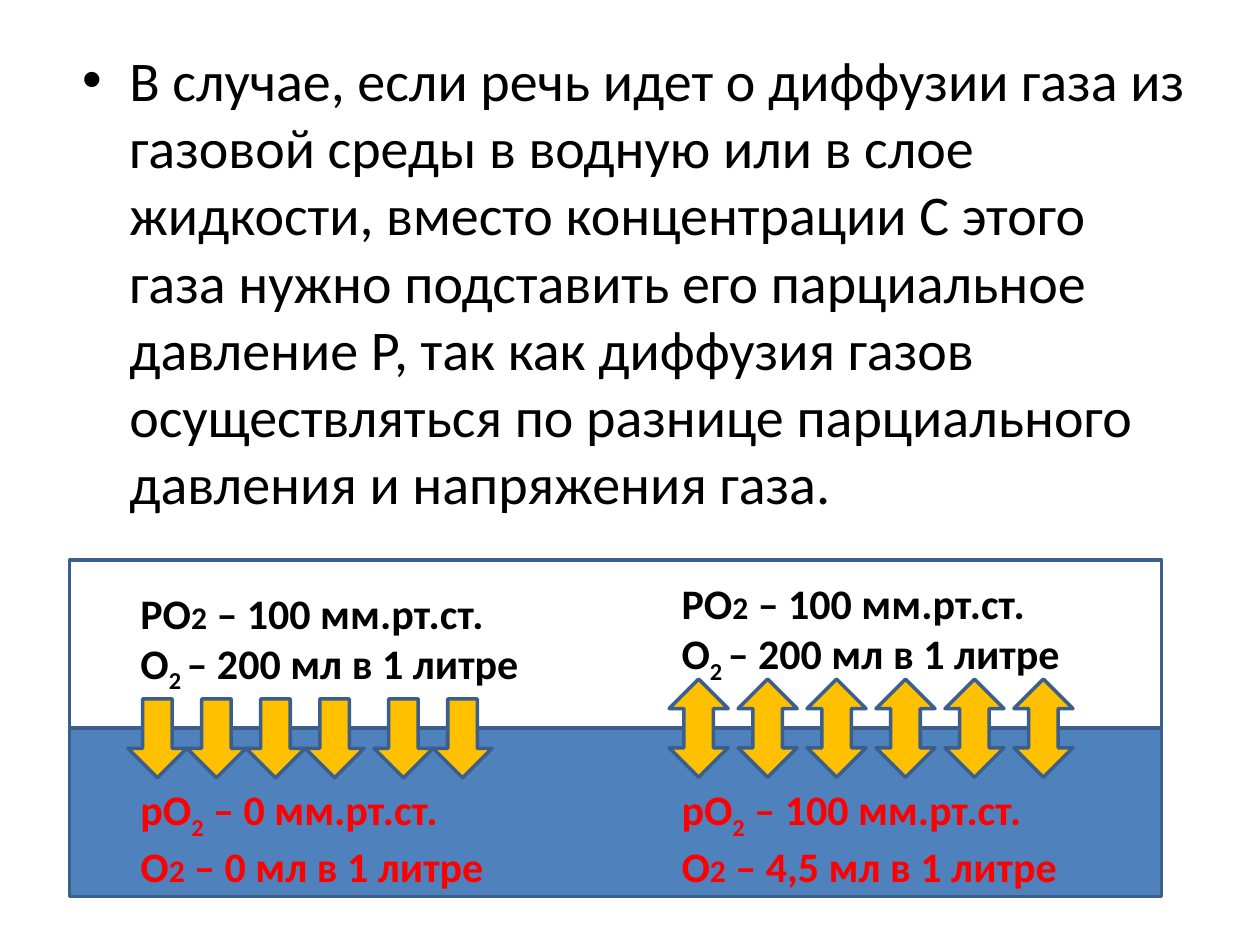
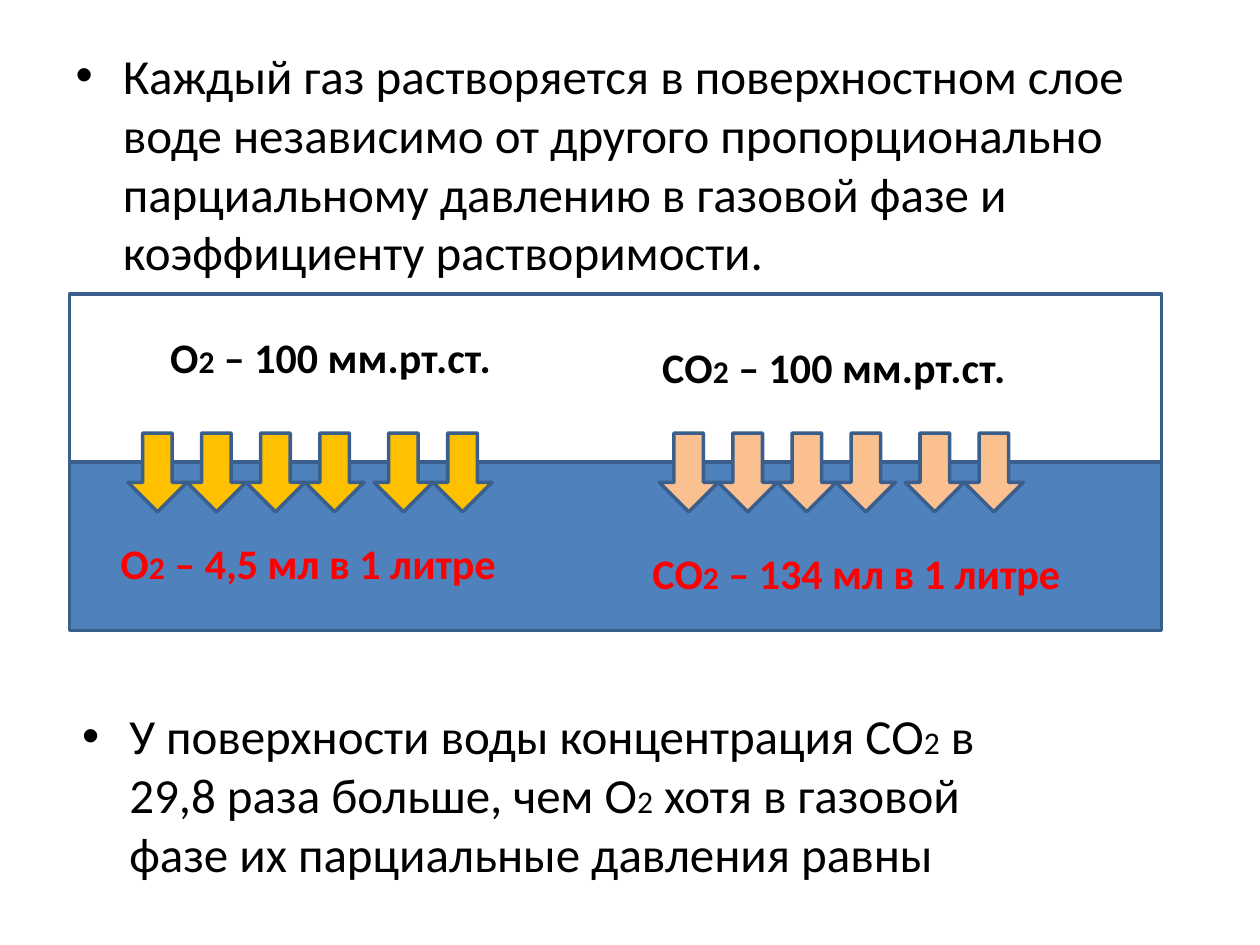
"""Build two slides on gas diffusion between air and water."""
from pptx import Presentation
from pptx.dml.color import RGBColor
from pptx.enum.shapes import MSO_SHAPE
from pptx.enum.text import MSO_ANCHOR, MSO_AUTO_SIZE
from pptx.util import Cm, Pt

FONT = "Calibri"
BLACK, RED, WATER, EDGE = "000000", "FF0000", "4F81BD", "3A5F8C"
GOLD, PEACH = "FFC000", "FAC090"
TANK_X, TANK_W, LAYER_H = 1.4, 22.02, 3.39
ARROW_W, DOWN_H, BOTH_H = 1.19, 1.59, 1.98
LABEL_W, LINE_H = 8.8, 1.17

# "|" separates runs; "_" lowers a run, "~" makes it small.
AIR = ["РО|~2| – 100 мм.рт.ст.", "О|_2 |– 200 мл в 1 литре"]
SLIDES = [
    dict(
        layout=1, surface=14.68,
        bodies=[dict(
            text="В случае, если речь идет о диффузии газа из газовой среды в водную "
                 "или в слое жидкости, вместо концентрации С этого газа нужно подставить "
                 "его парциальное давление Р, так как диффузия газов осуществляться по "
                 "разнице парциального давления и напряжения газа.",
            box=(1.4, 0.79, 22.86, 10.11), size=32)],
        labels=[(AIR, 2.58, 11.71, BLACK),
                (AIR, 13.49, 11.51, BLACK),
                (["рО|_2| – 0 мм.рт.ст.", "О|~2| – 0 мл в 1 литре"], 2.58, 15.67, RED),
                (["рО|_2| – 100 мм.рт.ст.", "О|~2| – 4,5 мл в 1 литре"], 13.49, 15.67, RED)],
        arrows=[("down", 2.58, GOLD), ("both", 13.49, GOLD)]),
    dict(
        layout=3, surface=9.32,
        bodies=[dict(
            text="Каждый газ растворяется в поверхностном слое воде независимо от другого "
                 "пропорционально парциальному давлению в газовой фазе и коэффициенту "
                 "растворимости.",
            box=(1.27, 0.79, 22.86, 5.36), size=28),
            dict(
            text="У поверхности воды концентрация СО|~2| в 29,8 раза больше, чем О|~2| хотя "
                 "в газовой фазе их парциальные давления равны",
            box=(1.4, 14.1, 20.35, 3.84), size=28, before=0)],
        labels=[(["О|~2| – 100 мм.рт.ст."], 3.18, 6.55, BLACK),
                (["О|~2| – 4,5 мл в 1 литре"], 2.18, 10.72, RED),
                (["СО|~2| – 100 мм.рт.ст."], 13.1, 6.76, BLACK),
                (["СО|~2| – 134 мл в 1 литре"], 12.9, 10.92, RED)],
        arrows=[("down", 2.58, GOLD), ("down", 13.29, PEACH)]),
]


def rgb(color):
    """Turn a hex string into a colour."""
    return RGBColor.from_string(color)


def write(p, text, size=24, color=BLACK, bold=False):
    """Add marked-up text to a paragraph as formatted runs."""
    for part in text.split("|"):
        r = p.add_run()
        r.text = part.lstrip("_~")
        f = r.font
        f.name, f.bold, f.color.rgb = FONT, bold, rgb(color)
        f.size = Pt(18 if part.startswith("~") else size)
        if part.startswith("_"):
            f._element.set("baseline", "-25000")


def add_body(sp, text, box, size, before=None):
    """Place a body placeholder and fill in its bullet."""
    sp.left, sp.top, sp.width, sp.height = map(Cm, box)
    tf = sp.text_frame
    tf.auto_size, tf.vertical_anchor = MSO_AUTO_SIZE.NONE, MSO_ANCHOR.TOP
    p = tf.paragraphs[0]
    if before is not None:
        p.space_before = Pt(before)
    write(p, text, size=size)


def add_label(s, lines, x, y, color):
    """Add a bold label, one paragraph a line."""
    tf = s.shapes.add_textbox(Cm(x), Cm(y), Cm(LABEL_W), Cm(LINE_H * len(lines))).text_frame
    tf.word_wrap = True
    for i, line in enumerate(lines):
        p = tf.add_paragraph() if i else tf.paragraphs[0]
        write(p, line, color=color, bold=True)


def add_block(s, kind, x, y, w, h, fill=None):
    """Add an outlined preset shape."""
    sp = s.shapes.add_shape(kind, Cm(x), Cm(y), Cm(w), Cm(h))
    sp.shadow.inherit = False
    sp.line.color.rgb, sp.line.width = rgb(EDGE), Pt(2)
    if fill:
        sp.fill.solid()
        sp.fill.fore_color.rgb = rgb(fill)
    else:
        sp.fill.background()


def add_arrows(s, way, x, surface, color):
    """Add a row of six arrows across the water surface."""
    for i in range(6):
        if way == "both":
            add_block(s, MSO_SHAPE.UP_DOWN_ARROW, x + i * 1.39, surface - BOTH_H / 2,
                      ARROW_W, BOTH_H, color)
        else:
            gap = 0.2 if i > 3 else 0
            add_block(s, MSO_SHAPE.DOWN_ARROW, x + i * ARROW_W + gap, surface - 0.59,
                      ARROW_W, DOWN_H, color)


def build(prs, layout, surface, bodies, labels, arrows):
    """Add one slide with its text and tank diagram."""
    s = prs.slides.add_slide(prs.slide_layouts[layout])
    title = s.shapes.title._element
    title.getparent().remove(title)
    for sp, body in zip(list(s.placeholders), bodies):
        add_body(sp, **body)
    add_block(s, MSO_SHAPE.RECTANGLE, TANK_X, surface, TANK_W, LAYER_H, WATER)
    add_block(s, MSO_SHAPE.RECTANGLE, TANK_X, surface - LAYER_H, TANK_W, LAYER_H)
    for label in labels:
        add_label(s, *label)
    for way, x, color in arrows:
        add_arrows(s, way, x, surface, color)


def main():
    """Build and save the presentation."""
    prs = Presentation()
    prs.slide_width, prs.slide_height = Cm(25.4), Cm(19.05)
    for slide in SLIDES:
        build(prs, **slide)
    prs.save("out.pptx")


if __name__ == "__main__":
    main()
